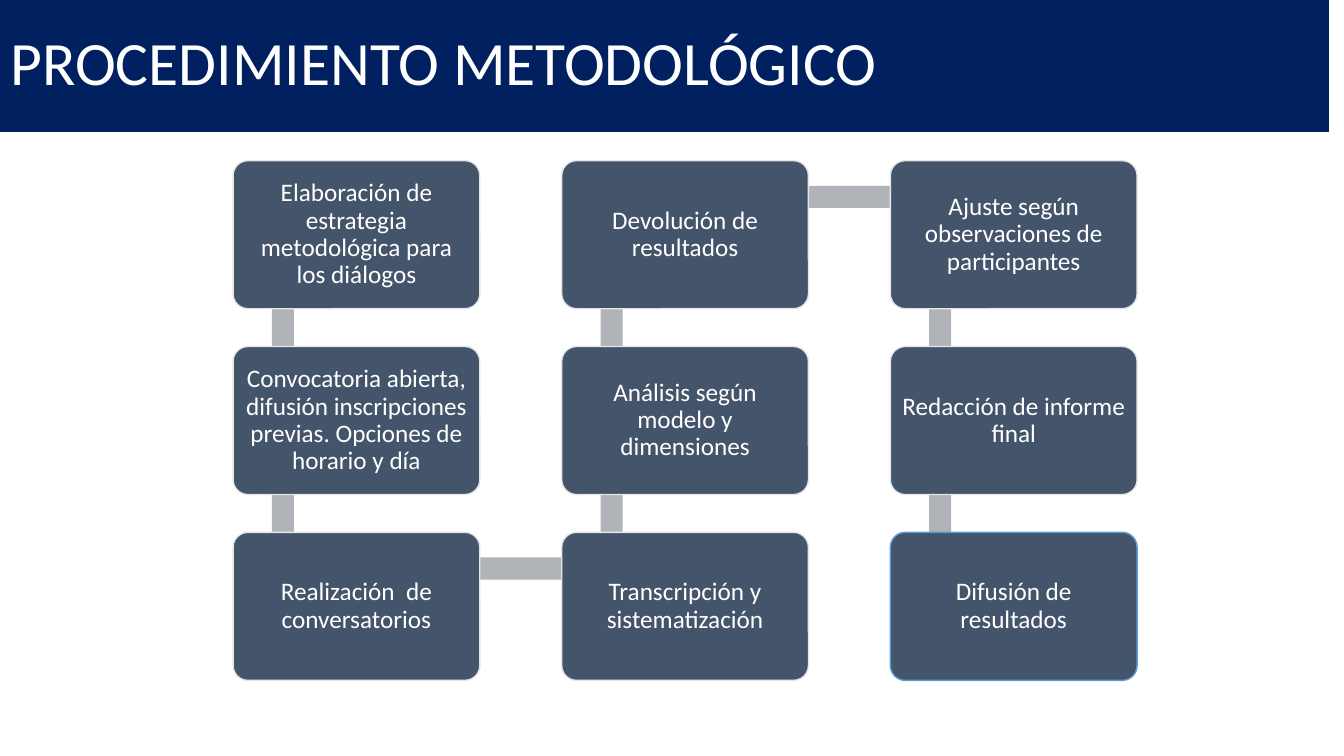
from dataclasses import dataclass
from pptx import Presentation, util as u
from pptx.dml.color import RGBColor
from pptx.enum import shapes, text

PX = 9525


@dataclass(frozen=True)
class Theme:
    """Hold the colours, font and type sizes."""
    navy: str = "002060"
    slate: str = "44546A"
    grey: str = "B0B4B9"
    pale: str = "E7E6E6"
    blue: str = "5B9BD5"
    white: str = "FFFFFF"
    font: str = "Calibri"
    head: int = 44
    body: int = 18


T = Theme()
STEPS = [
    "Elaboración de estrategia metodológica para los diálogos",
    "Convocatoria abierta, difusión inscripciones previas. Opciones de horario y día",
    "Realización  de conversatorios",
    "Transcripción y sistematización",
    "Análisis según modelo y dimensiones",
    "Devolución de resultados",
    "Ajuste según observaciones de participantes",
    "Redacción de informe final",
    "Difusión de resultados",
]


def px(n):
    """Turn px into EMU."""
    return u.Emu(n * PX)


def write(shape, words, size, align, pad):
    """Put formatted text in a shape."""
    frame = shape.text_frame
    frame.text = words
    frame.word_wrap = True
    frame.auto_size = text.MSO_AUTO_SIZE.NONE
    frame.vertical_anchor = text.MSO_ANCHOR.MIDDLE
    frame.margin_left = frame.margin_right = px(pad)
    frame.margin_top = frame.margin_bottom = px(pad)
    para = frame.paragraphs[0]
    para.alignment = align
    para.line_spacing = 0.9
    font = para.runs[0].font
    font.name, font.size = T.font, u.Pt(size)
    font.color.rgb = RGBColor.from_string(T.white)


def paint(shape, fill, line=None, width=1):
    """Set the fill and outline of a shape."""
    shape.fill.solid()
    shape.fill.fore_color.rgb = RGBColor.from_string(fill)
    if line:
        shape.line.color.rgb = RGBColor.from_string(line)
        shape.line.width = u.Pt(width)
    else:
        shape.line.fill.background()


def block(slide, kind, box, fill, line=None):
    """Add a flat preset shape in a box."""
    shape = slide.shapes.add_shape(kind, *map(px, box))
    shape.shadow.inherit = False
    paint(shape, fill, line)
    return shape


def banner(slide, box):
    """Place the title band."""
    title = slide.shapes.title
    title.left, title.top, title.width, title.height = map(px, box)
    paint(title, T.navy, T.navy, 0.75)
    write(title, "PROCEDIMIENTO METODOLÓGICO", T.head, text.PP_ALIGN.LEFT, 10)


def flow(slide, box, rows=3, card=(235, 141), bar=21):
    """Snake the steps down and up the columns of a box."""
    left, top, width, height = box
    wide, high = card
    cols = len(STEPS) // rows
    dx = (width - wide) // (cols - 1)
    dy = (height - high) // (rows - 1)
    spots = []
    for i in range(len(STEPS)):
        col, row = divmod(i, rows)
        row = rows - 1 - row if col % 2 else row
        spots.append((left + col * dx, top + row * dy))
    for (x, y), (x2, y2) in zip(spots, spots[1:]):
        if x == x2:
            link = (x + 37, min(y, y2) + 36, bar, dy)
        else:
            link = (x + 48, y + 24, dx, bar)
        block(slide, shapes.MSO_SHAPE.RECTANGLE, link, T.grey)
    for words, spot in zip(STEPS, spots):
        edge = T.blue if words == STEPS[-1] else T.pale
        step = block(slide, shapes.MSO_SHAPE.ROUNDED_RECTANGLE,
                     (*spot, *card), T.slate, edge)
        step.adjustments[0] = 0.1
        write(step, words, T.body, text.PP_ALIGN.CENTER, 7)


def main():
    """Build and save the slide."""
    deck = Presentation()
    deck.slide_width, deck.slide_height = px(1280), px(720)
    slide = deck.slides.add_slide(deck.slide_layouts[5])
    banner(slide, (0, 0, 1265, 125))
    flow(slide, (222, 153, 861, 495))
    deck.save("out.pptx")


if __name__ == "__main__":
    main()
